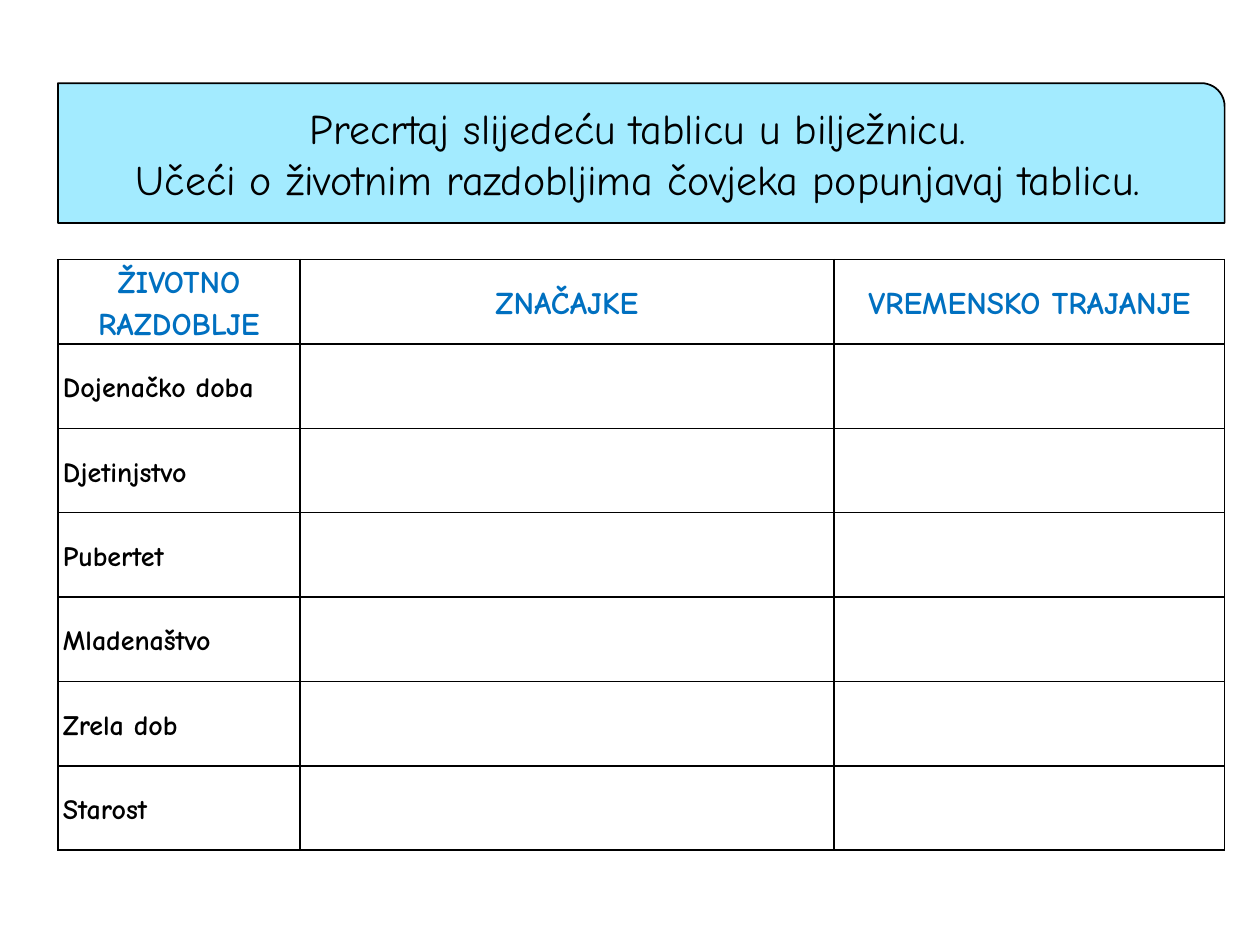
from lxml import etree
from pptx import Presentation
from pptx.dml.color import RGBColor
from pptx.enum.shapes import MSO_SHAPE
from pptx.enum.text import MSO_ANCHOR, PP_ALIGN
from pptx.oxml.ns import qn
from pptx.util import Inches, Pt

ROUND = MSO_SHAPE.ROUND_1_RECTANGLE
MIDDLE = MSO_ANCHOR.MIDDLE
LEFT, CENTER = PP_ALIGN.LEFT, PP_ALIGN.CENTER

BLACK = RGBColor(0x00, 0x00, 0x00)
BLUE = RGBColor(0x00, 0x70, 0xC0)
SKY = RGBColor(0xA3, 0xEB, 0xFF)

FONT = "Comic Neue"
EDGE, WIDTH = 0.46, 9.26
COLS = [1.92, 4.24, 3.1]
ROW = 0.67

TASK = [
    "Precrtaj slijedeću tablicu u bilježnicu.",
    "Učeći o životnim razdobljima čovjeka popunjavaj tablicu.",
]
HEADS = ["ŽIVOTNO RAZDOBLJE", "ZNAČAJKE", "VREMENSKO TRAJANJE"]
STAGES = ["Dojenačko doba", "Djetinjstvo", "Pubertet", "Mladenaštvo", "Zrela dob", "Starost"]

TASK_FONT = {"name": FONT, "size": Pt(24), "bold": False}
HEAD_FONT = {"name": FONT, "size": Pt(18), "bold": True}
STAGE_FONT = {"name": FONT, "size": Pt(16), "bold": True}
CELL = {
    "margin_left": Inches(0.04),
    "margin_right": Inches(0.04),
    "margin_top": 0,
    "margin_bottom": 0,
    "vertical_anchor": MIDDLE,
}


def set_all(item, values):
    for name, value in values.items():
        setattr(item, name, value)


def write(para, text, look, color, align, space=1.0):
    para.text = text
    set_all(para, {"alignment": align, "line_spacing": space})
    set_all(para.runs[0].font, look)
    para.runs[0].font.color.rgb = color


def add_banner(slide):
    box = slide.shapes.add_shape(
        ROUND, Inches(EDGE), Inches(0.66), Inches(WIDTH), Inches(1.11))
    box.shadow.inherit = False
    box.fill.solid()
    box.fill.fore_color.rgb = SKY
    box.line.color.rgb = BLACK
    box.line.width = Pt(1)
    frame = box.text_frame
    set_all(frame, {"word_wrap": True, "vertical_anchor": MIDDLE})
    for i, text in enumerate(TASK):
        para = frame.add_paragraph() if i else frame.paragraphs[0]
        write(para, text, TASK_FONT, BLACK, CENTER)


def add_border(cell):
    props = cell._tc.get_or_add_tcPr()
    for i, side in enumerate(("a:lnL", "a:lnR", "a:lnT", "a:lnB")):
        line = etree.Element(qn(side), w=str(Pt(1)))
        fill = etree.SubElement(line, qn("a:solidFill"))
        etree.SubElement(fill, qn("a:srgbClr"), val=str(BLACK))
        props.insert(i, line)


def add_grid(slide):
    count = len(STAGES) + 1
    table = slide.shapes.add_table(
        count, len(COLS), Inches(EDGE), Inches(2.06),
        Inches(WIDTH), Inches(ROW * count)).table
    set_all(table, {"first_row": False, "horz_banding": False})
    for col, width in zip(table.columns, COLS):
        col.width = Inches(width)
    for row in table.rows:
        row.height = Inches(ROW)
    for cell in table.iter_cells():
        set_all(cell, CELL)
        cell.fill.background()
        add_border(cell)
    for i, text in enumerate(HEADS):
        para = table.cell(0, i).text_frame.paragraphs[0]
        write(para, text, HEAD_FONT, BLUE, CENTER, 1.15)
    for i, text in enumerate(STAGES, 1):
        para = table.cell(i, 0).text_frame.paragraphs[0]
        write(para, text, STAGE_FONT, BLACK, LEFT, 1.15)


def main():
    deck = Presentation()
    set_all(deck, {"slide_width": Inches(10), "slide_height": Inches(7.5)})
    slide = deck.slides.add_slide(deck.slide_layouts[6])
    add_grid(slide)
    add_banner(slide)
    deck.save("out.pptx")


if __name__ == "__main__":
    main()
